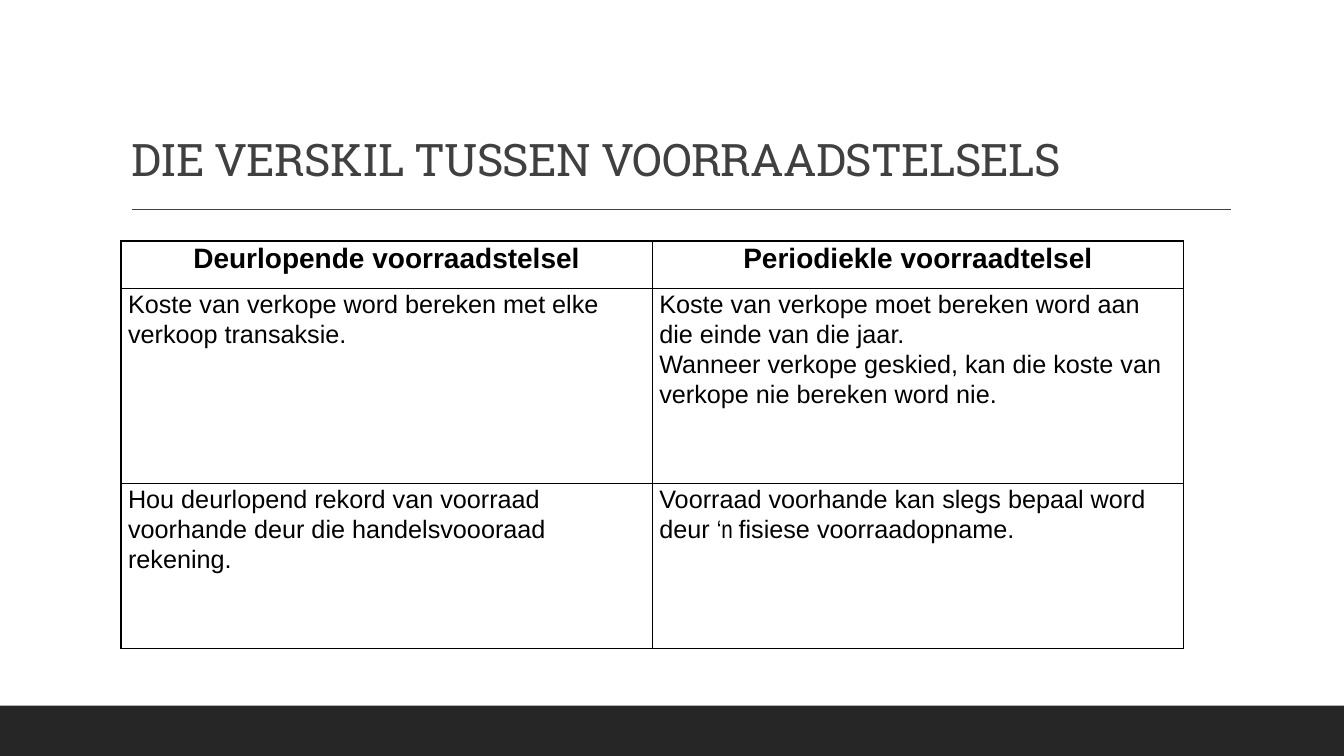
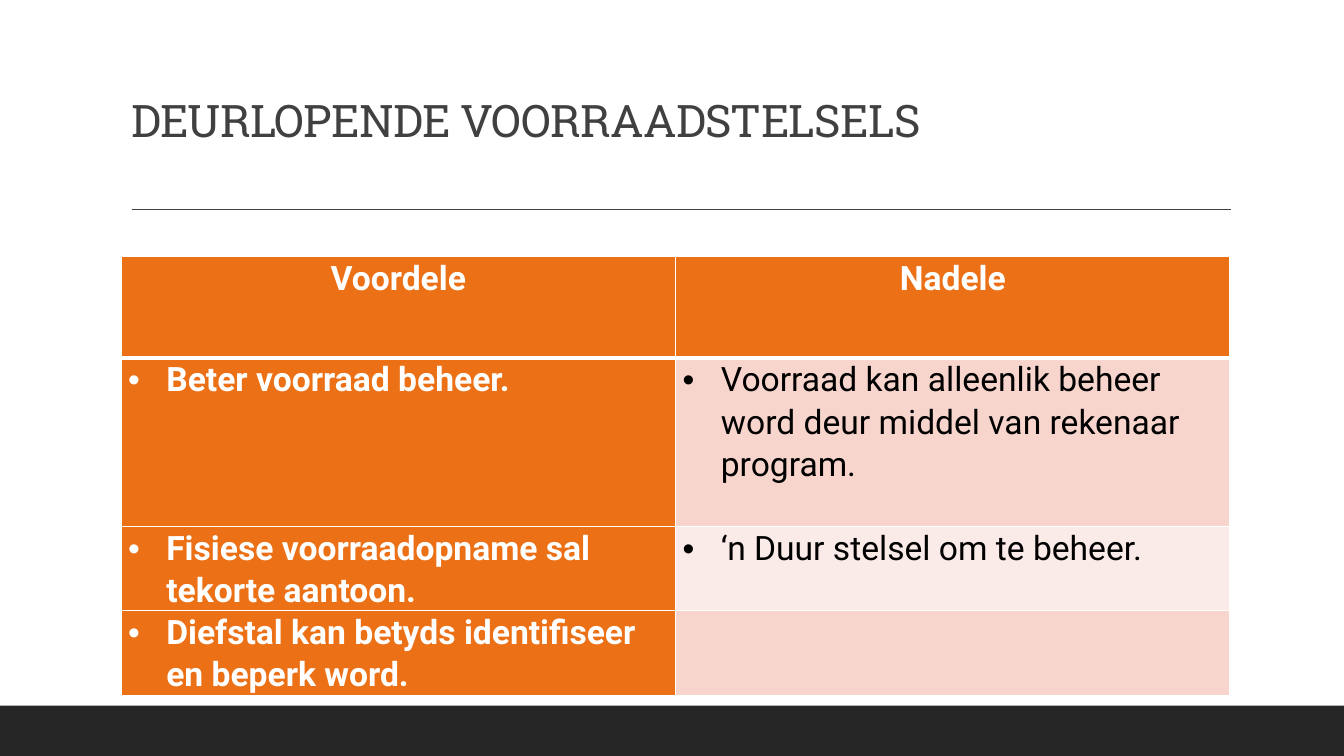
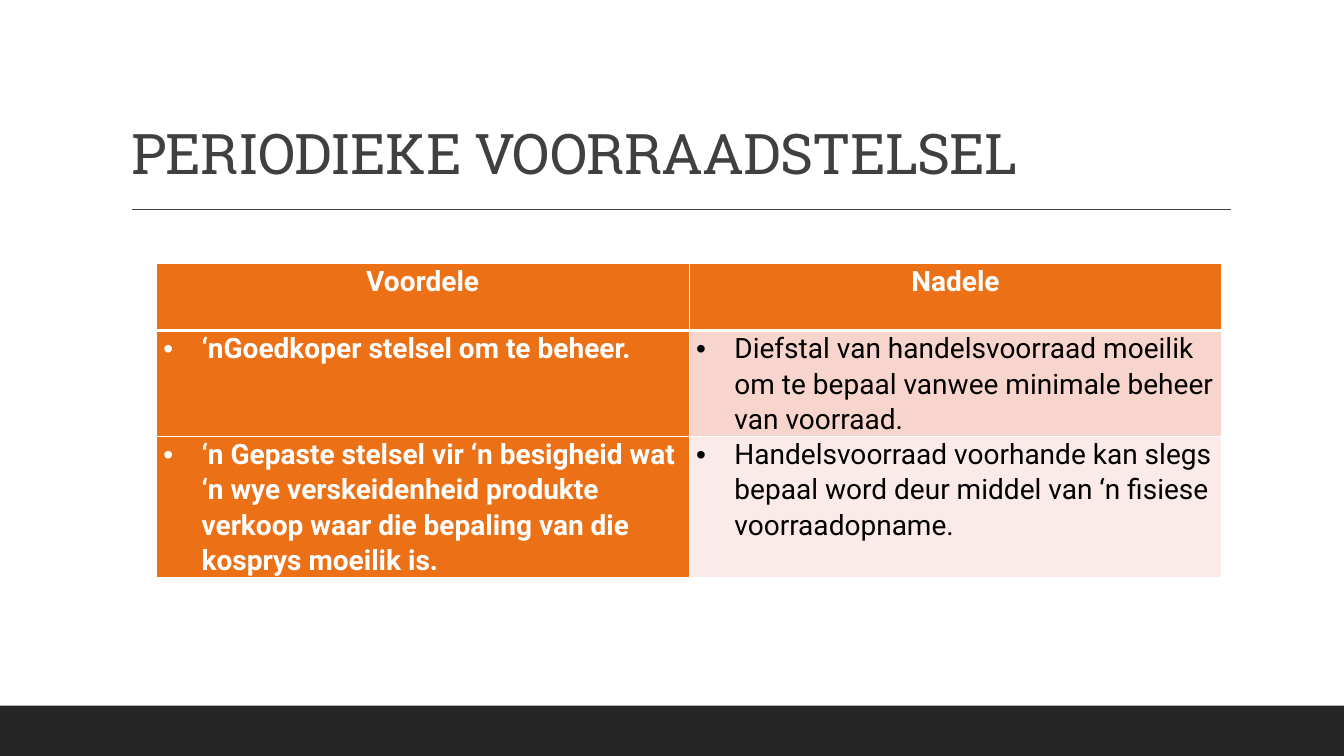
from lxml.etree import SubElement
from pptx import Presentation
from pptx.dml.color import RGBColor
from pptx.enum.shapes import MSO_CONNECTOR as CONN, MSO_SHAPE as SHAPE
from pptx.enum.text import MSO_ANCHOR as ANCHOR, MSO_AUTO_SIZE as AUTO, PP_ALIGN as ALIGN
from pptx.oxml.ns import qn
from pptx.util import Inches, Pt

BLACK = RGBColor(0x00, 0x00, 0x00)
WHITE = RGBColor(0xFF, 0xFF, 0xFF)
GREY = RGBColor(0x40, 0x40, 0x40)
BAND = RGBColor(0x26, 0x26, 0x26)
ORANGE = RGBColor(0xEC, 0x70, 0x16)
PINK = RGBColor(0xF8, 0xD5, 0xCC)
PALE = RGBColor(0xFB, 0xEB, 0xE8)

W, H = 13.33, 7.5
TITLE_FONT, BODY_FONT = "Roboto Slab", "Roboto"
PLAIN_FONT, NARROW_FONT = "Arial", "Arial Narrow"


def add_run(p, text, color, **formats):
    r = p.add_run()
    r.text = text
    for name, value in formats.items():
        setattr(r.font, name, value)
    r.font.color.rgb = color
    return r


def add_decor(slide, layout):
    """Bottom band and title rule, moved to the layout all slides share."""
    band = slide.shapes.add_shape(SHAPE.RECTANGLE, 0, Inches(7), Inches(W), Inches(H - 7))
    band.shadow.inherit = False
    band.fill.solid()
    band.fill.fore_color.rgb = BAND
    band.line.fill.background()
    rule = slide.shapes.add_connector(CONN.STRAIGHT, Inches(1.31), Inches(2.08),
                                      Inches(12.21), Inches(2.08))
    rule.line.color.rgb = GREY
    rule.line.width = Pt(1)
    SubElement(rule.element.spPr, qn("a:effectLst"))
    for sp in (band, rule):
        layout.shapes.element.append(sp.element)


def add_title(slide, text, top, height, size):
    sp = slide.shapes.title
    box = dict(left=1.2, top=top, width=11, height=height)
    for name, value in box.items():
        setattr(sp, name, Inches(value))
    tf = sp.text_frame
    tf.auto_size = AUTO.NONE
    tf.word_wrap = True
    tf.vertical_anchor = ANCHOR.BOTTOM
    p = tf.paragraphs[0]
    p.alignment = ALIGN.LEFT
    p.line_spacing = 0.9
    r = add_run(p, text, GREY, name=TITLE_FONT, size=Pt(size))
    r.font._element.set("spc", "-50")


def set_borders(cell, color, widths):
    """Draw the four sides; widths are points for left, right, top, bottom."""
    tcPr = cell._tc.get_or_add_tcPr()
    for side, width in zip("LRTB", widths):
        ln = SubElement(tcPr, qn(f"a:ln{side}"), w=str(Pt(width)))
        fill = SubElement(ln, qn("a:solidFill"))
        SubElement(fill, qn("a:srgbClr"), val=str(color))


def set_bullet(p):
    pPr = p._p.get_or_add_pPr()
    pPr.set("marL", str(Inches(0.38)))
    pPr.set("indent", str(-Inches(0.38)))
    SubElement(pPr, qn("a:buFont"), typeface="Arial")
    SubElement(pPr, qn("a:buChar"), char="•")


def fill_cell(cell, paragraphs, color, bulleted, centred, **formats):
    """Each paragraph is a list of runs; a run is (text, font name)."""
    cell.margin_left = cell.margin_right = Inches(0.07)
    cell.margin_top = cell.margin_bottom = 0
    tf = cell.text_frame
    for i, runs in enumerate(paragraphs):
        p = tf.add_paragraph() if i else tf.paragraphs[0]
        p.line_spacing = 1.07
        p.alignment = ALIGN.CENTER if centred else ALIGN.LEFT
        if bulleted:
            set_bullet(p)
        for text, font in runs:
            add_run(p, text, color, name=font, **formats)


def add_grid(slide, left, top, width, heights, rows):
    """Empty two-column table without the banded style."""
    tbl = slide.shapes.add_table(len(rows), 2, Inches(left), Inches(top),
                                 Inches(width), Inches(sum(heights))).table
    tbl.first_row = tbl.horz_banding = False
    for row, height in zip(tbl.rows, heights):
        row.height = Inches(height)
    return tbl


def add_plain_table(slide, left, top, width, heights, rows):
    """Black ruled table with a bold heading row."""
    tbl = add_grid(slide, left, top, width, heights, rows)
    for i, row in enumerate(rows):
        head = i == 0
        for j, paragraphs in enumerate(row):
            cell = tbl.cell(i, j)
            set_borders(cell, BLACK, (1, 1, 1, 1))
            cell.fill.background()
            fill_cell(cell, paragraphs, BLACK, False, head,
                      size=Pt(20 if head else 18), bold=head)


def add_pros_cons(slide, left, top, width, heights, size, rows):
    """Orange heading row and first column, tinted second column."""
    rows = [("Voordele", "Nadele")] + rows
    tbl = add_grid(slide, left, top, width, heights, rows)
    for i, row in enumerate(rows):
        for j, text in enumerate(row):
            cell = tbl.cell(i, j)
            strong = i == 0 or j == 0
            set_borders(cell, WHITE, (1, 1, 3 if i == 1 else 1, 3 if i == 0 else 1))
            cell.fill.solid()
            cell.fill.fore_color.rgb = ORANGE if strong else (PALE, PINK)[i % 2]
            paragraphs = [[(text, BODY_FONT)]] if text else []
            fill_cell(cell, paragraphs, WHITE if strong else BLACK, i > 0, i == 0,
                      size=Pt(size), bold=strong)


def plain(*texts):
    return [[(text, PLAIN_FONT)] for text in texts]


def main():
    prs = Presentation()
    prs.slide_width, prs.slide_height = Inches(W), Inches(H)
    layout = prs.slide_layouts[5]

    # Comparison of the two systems
    s = prs.slides.add_slide(layout)
    add_decor(s, layout)
    add_title(s, "DIE VERSKIL TUSSEN VOORRAADSTELSELS", 0.66, 1.24, 32)
    add_plain_table(s, 1.2, 2.39, 10.54, (0.47, 1.94, 1.63), [
        (plain("Deurlopende voorraadstelsel"), plain("Periodiekle voorraadtelsel")),
        (plain("Koste van verkope word bereken met elke verkoop transaksie."),
         plain("Koste van verkope moet bereken word aan die einde van die jaar.",
               "Wanneer verkope geskied, kan die koste van verkope nie bereken word nie.")),
        (plain("Hou deurlopend rekord van voorraad voorhande deur die "
               "handelsvoooraad rekening."),
         [[("Voorraad voorhande kan slegs bepaal word deur ", PLAIN_FONT),
           ("‘n ", NARROW_FONT),
           ("fisiese voorraadopname.", PLAIN_FONT)]]),
    ])

    # Perpetual system
    s = prs.slides.add_slide(layout)
    add_title(s, "DEURLOPENDE VOORRAADSTELSELS", 0.31, 1.2, 32)
    add_pros_cons(s, 1.2, 2.54, 11, (1.01, 1.67, 0.84, 0.84), 24, [
        ("Beter voorraad beheer.",
         "Voorraad kan alleenlik beheer word deur middel van rekenaar program."),
        ("Fisiese voorraadopname sal tekorte aantoon.",
         "‘n Duur stelsel om te beheer."),
        ("Diefstal kan betyds identifiseer en beperk word.", ""),
    ])

    # Periodic system
    s = prs.slides.add_slide(layout)
    add_title(s, "PERIODIEKE VOORRAADSTELSEL", 0.76, 1.14, 40)
    add_pros_cons(s, 1.55, 2.61, 10.57, (0.67, 1.04, 1.4), 20, [
        ("‘nGoedkoper stelsel om te beheer.",
         "Diefstal van handelsvoorraad moeilik om te bepaal vanwee minimale "
         "beheer van voorraad."),
        ("‘n Gepaste stelsel vir ‘n besigheid wat ‘n wye verskeidenheid produkte "
         "verkoop waar die bepaling van die kosprys moeilik is.",
         "Handelsvoorraad voorhande kan slegs bepaal word deur middel van ‘n "
         "fisiese voorraadopname."),
    ])

    prs.save("out.pptx")


if __name__ == "__main__":
    main()
